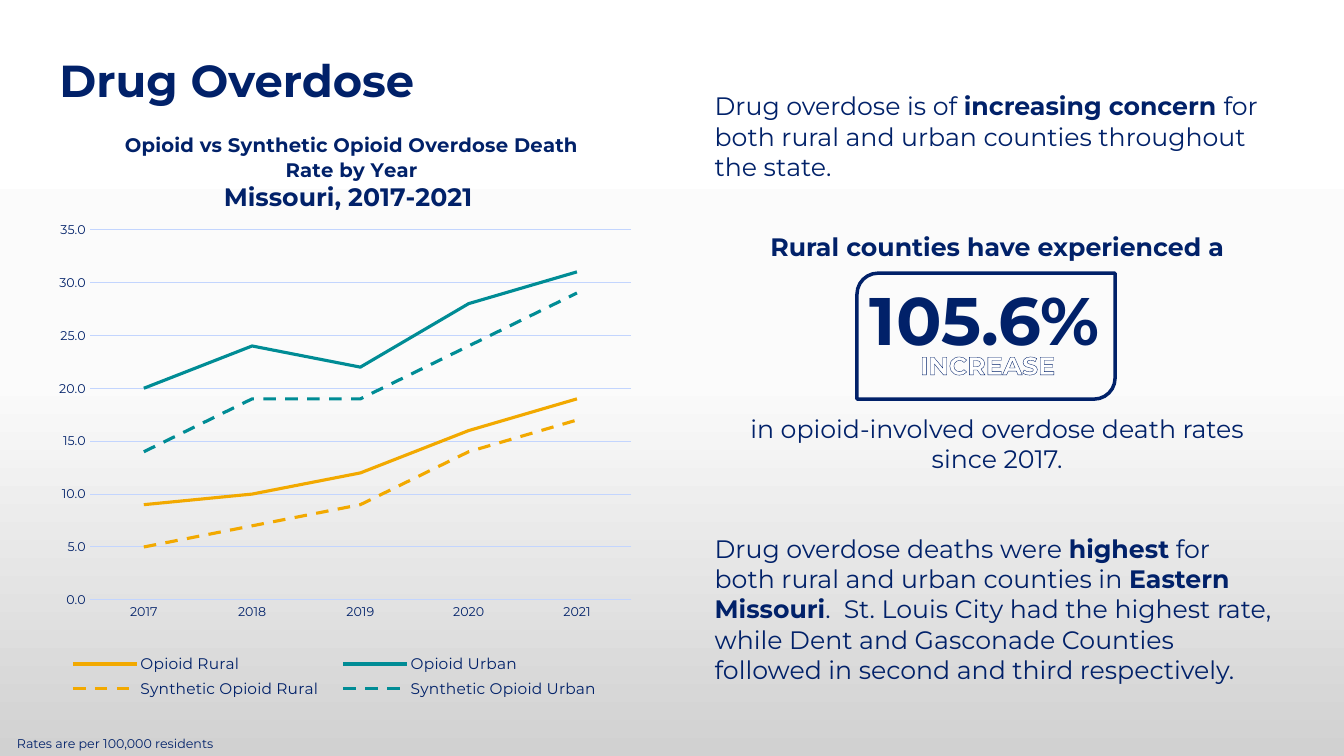
"""Build the drug overdose slide with its line chart and callout."""
from copy import deepcopy

from lxml.etree import SubElement
from pptx import Presentation
from pptx.chart.data import CategoryChartData
from pptx.dml.color import RGBColor
from pptx.enum.chart import XL_CHART_TYPE, XL_LEGEND_POSITION, XL_TICK_MARK
from pptx.enum.dml import MSO_LINE
from pptx.enum.shapes import MSO_SHAPE
from pptx.enum.text import MSO_AUTO_SIZE, PP_ALIGN
from pptx.oxml import parse_xml
from pptx.oxml.ns import nsdecls, qn
from pptx.util import Inches, Pt

COLORS = {
    "navy": "012169",
    "gold": "F2A900",
    "teal": "008C95",
    "grid": "C3D5FE",
    "white": "FFFFFF",
    "pale": "FBFBFB",
    "gray": "D1D1D1",
}
FONT = "Montserrat"
YEARS = ["2017", "2018", "2019", "2020", "2021"]
DEATH_RATES = [
    ("Opioid Rural", [9, 10, 12, 16, 19], "gold", None),
    ("Opioid Urban", [20, 24, 22, 28, 31], "teal", None),
    ("Synthetic Opioid Rural", [5, 7, 9, 14, 17], "gold", MSO_LINE.DASH),
    ("Synthetic Opioid Urban", [14, 19, 19, 24, 29], "teal", MSO_LINE.DASH),
]


def color(name):
    return RGBColor.from_string(COLORS[name])


def style_font(font, size, bold=False, fill="navy"):
    font.name, font.size, font.bold = FONT, Pt(size), bold
    font.color.rgb = color(fill)


def add_text(para, text, size=18, bold=False, fill="navy", outline=None):
    """Add one formatted span to a paragraph."""
    span = para.add_run()
    span.text = text
    style_font(span.font, size, bold, fill)
    if outline:
        span.font._element.insert(0, parse_xml(
            f'<a:ln {nsdecls("a")} w="{Pt(0.8)}"><a:solidFill>'
            f'<a:srgbClr val="{COLORS[outline]}"/></a:solidFill></a:ln>'))


def set_layout(parent, position, **fractions):
    """Place a chart part by fractions of the chart area."""
    for old in parent.findall(qn("c:layout")):
        parent.remove(old)
    layout = parse_xml(f'<c:layout {nsdecls("c")}><c:manualLayout/></c:layout>')
    for tag, value in fractions.items():
        SubElement(layout[0], qn(f"c:{tag}")).set("val", str(value))
    parent.insert(position, layout)


class SlideBuilder:
    """Holds the style and the current slide."""

    def __init__(self, deck):
        self.page = deck.slides.add_slide(deck.slide_layouts[6])

    def background(self, *names):
        fill = self.page.background.fill
        fill.gradient()
        fill.gradient_angle = 270
        first, last = fill.gradient_stops
        first.color.rgb, last.color.rgb = color(names[0]), color(names[2])
        stops = self.page._element.find(".//" + qn("a:gsLst"))
        middle = deepcopy(stops[0])
        middle.set("pos", "50000")
        middle.find(qn("a:srgbClr")).set("val", COLORS[names[1]])
        stops.insert(1, middle)

    def text(self, place, *paragraphs, align=PP_ALIGN.LEFT, gap=0, wrap=True, **style):
        """Add paragraphs, each a list of (text, bold) spans."""
        box = self.page.shapes.add_textbox(*map(Inches, place))
        frame = box.text_frame
        frame.word_wrap = wrap
        frame.auto_size = MSO_AUTO_SIZE.SHAPE_TO_FIT_TEXT
        for index, spans in enumerate(paragraphs):
            para = frame.add_paragraph() if index else frame.paragraphs[0]
            para.alignment = align
            if index:
                para.space_before = Pt(gap)
            for text, bold in spans:
                add_text(para, text, bold=bold, **style)

    def frame(self, place):
        shape = self.page.shapes.add_shape(
            MSO_SHAPE.ROUND_2_DIAG_RECTANGLE, *map(Inches, place))
        shape.shadow.inherit = False
        shape.fill.background()
        shape.line.color.rgb = color("navy")
        shape.line.width = Pt(2.5)

    def line_chart(self, place, title_lines):
        data = CategoryChartData(number_format="0")
        data.categories = YEARS
        for name, values, _, _ in DEATH_RATES:
            data.add_series(name, values)
        chart = self.page.shapes.add_chart(
            XL_CHART_TYPE.LINE, *map(Inches, place), data).chart
        style_font(chart.font, 10)
        for series, (_, _, fill, dash) in zip(chart.plots[0].series, DEATH_RATES):
            series.smooth = False
            line = series.format.line
            line.color.rgb = color(fill)
            line.width = Pt(2.25)
            if dash:
                line.dash_style = dash
        chart.plots[0].vary_by_categories = False
        self.axes(chart)
        self.chart_title(chart, title_lines)
        chart.has_legend = True
        chart.legend.position = XL_LEGEND_POSITION.BOTTOM
        chart.legend.include_in_layout = False
        style_font(chart.legend.font, 11)
        set_layout(chart.legend._element, 1, xMode="edge", yMode="edge",
                   x=0.02, y=0.88, w=0.93, h=0.09)
        set_layout(chart._chartSpace.chart.plotArea, 0, layoutTarget="inner",
                   xMode="edge", yMode="edge", x=0.08, y=0.17, w=0.895, h=0.626)

    def axes(self, chart):
        for axis in (chart.category_axis, chart.value_axis):
            axis.major_tick_mark = axis.minor_tick_mark = XL_TICK_MARK.NONE
            style_font(axis.tick_labels.font, 9)
        value_axis = chart.value_axis
        value_axis.minimum_scale, value_axis.maximum_scale = 0, 35
        value_axis.major_unit = 5
        value_axis.tick_labels.number_format = "#,##0.0"
        value_axis.tick_labels.number_format_is_linked = False
        value_axis.format.line.fill.background()
        for line in (value_axis.major_gridlines.format.line,
                     chart.category_axis.format.line):
            line.color.rgb = color("grid")
            line.width = Pt(0.75)

    def chart_title(self, chart, lines):
        chart.has_title = True
        title = chart.chart_title
        title.include_in_layout = False
        frame = title.text_frame
        for index, (text, size) in enumerate(lines):
            para = frame.add_paragraph() if index else frame.paragraphs[0]
            para.alignment = PP_ALIGN.CENTER
            add_text(para, text, size=size, bold=True)
        set_layout(title._element, 1, xMode="edge", yMode="edge", x=0.133, y=0)


def main():
    deck = Presentation()
    deck.slide_width, deck.slide_height = Inches(13.33), Inches(7.5)
    slide = SlideBuilder(deck)
    slide.background("white", "pale", "gray")
    slide.text((0.49, 0.47, 6.22, 0.64), [("Drug Overdose", True)], size=32)
    slide.text((6.99, 0.85, 5.76, 1.01), [
        ("Drug overdose is of ", False), ("increasing concern ", True),
        ("for both rural and urban counties throughout the state.", False)])
    slide.text((6.99, 2.25, 5.8, 2.52),
               [("Rural counties have experienced a", True)],
               [("in opioid-involved overdose death rates since 2017.", False)],
               align=PP_ALIGN.CENTER, gap=108)
    slide.text((8.53, 2.71, 2.54, 0.91), [("105.6%", True)], size=48)
    slide.text((9.02, 3.42, 1.55, 0.4), [("INCREASE", True)], wrap=False,
               align=PP_ALIGN.CENTER, fill="white", outline="navy")
    slide.frame((8.5, 2.71, 2.56, 1.25))
    slide.text((0.07, 7.25, 4.95, 0.25),
               [("Rates are per 100,000 residents", False)], size=9)
    slide.line_chart((0.41, 1.28, 6, 5.87), [
        ("Opioid vs Synthetic Opioid Overdose Death Rate by Year", 14),
        ("Missouri, 2017-2021 ", 18)])
    slide.text((6.99, 5.24, 5.76, 1.62), [
        ("Drug overdose deaths were ", False), ("highest", True),
        (" for both rural and urban counties in ", False),
        ("Eastern Missouri", True),
        (".  St. Louis City had the highest rate, while Dent and Gasconade "
         "Counties followed in second and third respectively.", False)])
    deck.save("out.pptx")


if __name__ == "__main__":
    main()
